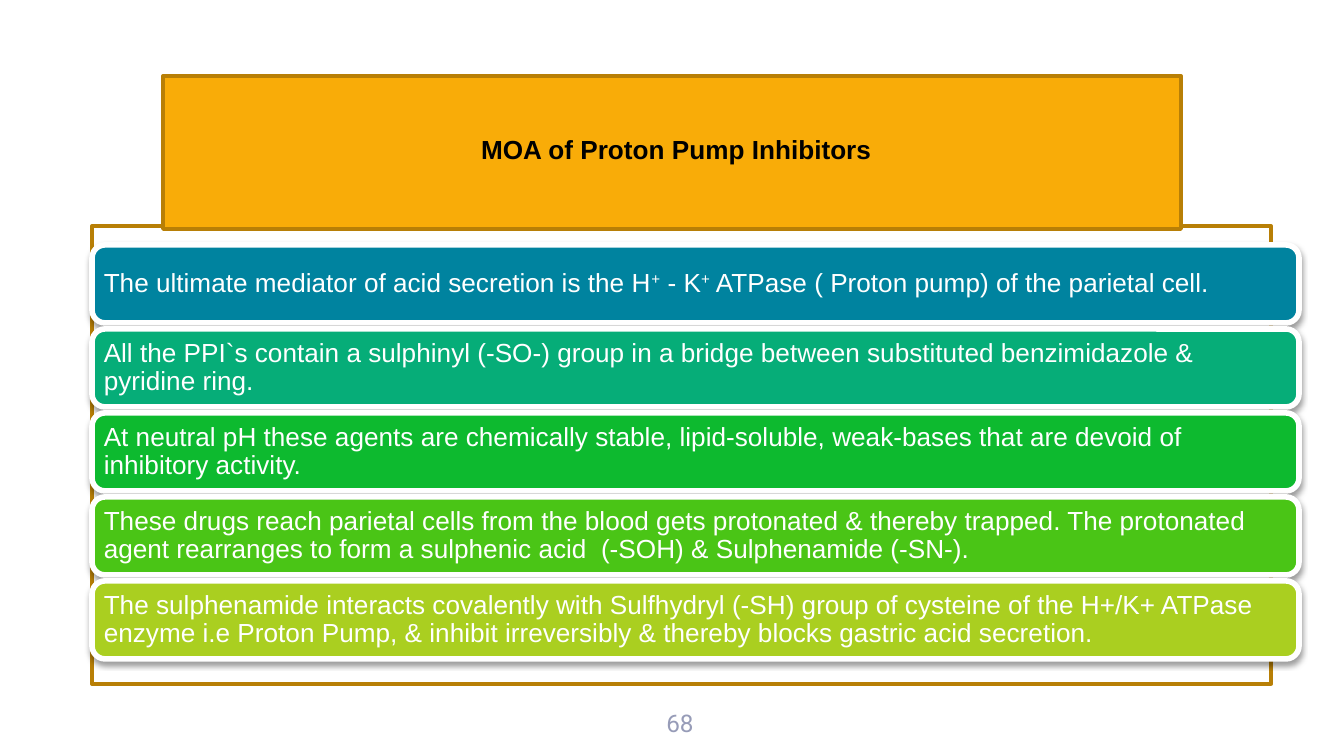
"""Builds a slide on the mechanism of action of proton pump inhibitors."""
from lxml.etree import SubElement
from pptx import Presentation
from pptx.dml.color import RGBColor
from pptx.enum.shapes import MSO_SHAPE as SHAPE
from pptx.enum.text import MSO_ANCHOR as ANCHOR, PP_ALIGN as ALIGN
from pptx.oxml.ns import qn
from pptx.util import Emu, Pt

PX = 914400 / 134.4
WHITE = RGBColor(0xFF, 0xFF, 0xFF)
BLACK = RGBColor(0x00, 0x00, 0x00)
ORANGE = RGBColor(0xF9, 0xAC, 0x08)
BROWN = RGBColor(0xB8, 0x7F, 0x06)
GREY = RGBColor(0x97, 0x9C, 0xB8)
BLUE = RGBColor(0x00, 0x83, 0x9F)
TEAL = RGBColor(0x06, 0xAD, 0x78)
GREEN = RGBColor(0x0D, 0xBA, 0x2F)
LEAF = RGBColor(0x4A, 0xC5, 0x16)
LIME = RGBColor(0xAA, 0xCF, 0x20)

BAR_TOP, BAR_PITCH = 245, 84
SUPERSCRIPT = "+"
STEPS = [
    (BLUE, ["The ultimate mediator of acid secretion is the H", SUPERSCRIPT, " - K",
            SUPERSCRIPT, " ATPase ( Proton pump) of the parietal cell."]),
    (TEAL, ["All the PPI`s contain a sulphinyl (-SO-) group in a bridge between "
            "substituted benzimidazole & pyridine ring."]),
    (GREEN, ["At neutral pH these agents are chemically stable, lipid-soluble, "
             "weak-bases that are devoid of inhibitory activity."]),
    (LEAF, ["These drugs reach parietal cells from the blood gets protonated & thereby "
            "trapped. The protonated agent rearranges to form a sulphenic acid  (-SOH) "
            "& Sulphenamide (-SN-)."]),
    (LIME, ["The sulphenamide interacts covalently with Sulfhydryl (-SH) group of "
            "cysteine of the H+/K+ ATPase enzyme i.e Proton Pump, & inhibit "
            "irreversibly & thereby blocks gastric acid secretion."]),
]


def px(n):
    """Turn px into EMU."""
    return Emu(round(n * PX))


def set_text(sp, runs, size, color, font="Arial", bold=False,
             align=ALIGN.LEFT, anchor=ANCHOR.TOP, insets=(13, 7)):
    """Write one paragraph into a shape, run by run, and return it."""
    tf = sp.text_frame
    tf.word_wrap = True
    tf.vertical_anchor = anchor
    tf.margin_left = tf.margin_right = px(insets[0])
    tf.margin_top = tf.margin_bottom = px(insets[1])
    p = tf.paragraphs[0]
    p.alignment = align
    for text in runs:
        r = p.add_run()
        r.text = text
        r.font.name, r.font.size, r.font.bold = font, Pt(size), bold
        r.font.color.rgb = color
        if text == SUPERSCRIPT:
            r.font._element.set("baseline", "30000")
    return p


def add_box(slide, kind, box, fill, line, width):
    """Add a preset shape with an outline and an optional fill."""
    sp = slide.shapes.add_shape(kind, *map(px, box))
    if fill is None:
        sp.fill.background()
    else:
        sp.fill.solid()
        sp.fill.fore_color.rgb = fill
    sp.line.color.rgb = line
    sp.line.width = Pt(width)
    sp.shadow.inherit = False
    return sp


def add_shadow(sp):
    """Give a shape a soft shadow straight below it."""
    effects = sp._element.spPr.find(qn("a:effectLst"))
    shadow = SubElement(effects, qn("a:outerShdw"), blurRad=str(Pt(3.1)),
                        dist=str(Pt(1.6)), dir="5400000", rotWithShape="0")
    color = SubElement(shadow, qn("a:srgbClr"), val=str(BLACK))
    SubElement(color, qn("a:alpha"), val="38000")


def add_title(slide, text):
    """Place the title placeholder in front of the banner."""
    title = slide.shapes.title
    title.left, title.top, title.width, title.height = map(px, (468, 126, 421, 46))
    set_text(title, [text], 14, BLACK, bold=True)
    slide.shapes._spTree.append(title._element)


def add_step(slide, top, color, runs):
    """Add one rounded bar with its text."""
    sp = add_box(slide, SHAPE.ROUNDED_RECTANGLE, (92, top, 1207, 78), color, WHITE, 3)
    add_shadow(sp)
    p = set_text(sp, runs, 14, WHITE, anchor=ANCHOR.MIDDLE, insets=(8, 8))
    p.line_spacing = 0.9


def add_page_number(slide, number):
    """Add the page number at the foot of the slide."""
    sp = slide.shapes.add_textbox(*map(px, (640, 695, 80, 44)))
    set_text(sp, [number], 13, GREY, font="Roboto", align=ALIGN.CENTER, insets=(13, 13))


def main():
    """Build and save the slide."""
    prs = Presentation()
    prs.slide_width, prs.slide_height = px(1344), px(756)
    slide = prs.slides.add_slide(prs.slide_layouts[5])
    add_page_number(slide, "68")
    add_box(slide, SHAPE.RECTANGLE, (92, 226, 1179, 458), None, BROWN, 2)
    add_box(slide, SHAPE.RECTANGLE, (163, 76, 1018, 153), ORANGE, BROWN, 2)
    add_title(slide, "MOA of Proton Pump Inhibitors")
    for i, (color, runs) in enumerate(STEPS):
        add_step(slide, BAR_TOP + i * BAR_PITCH, color, runs)
    prs.save("out.pptx")


if __name__ == "__main__":
    main()
